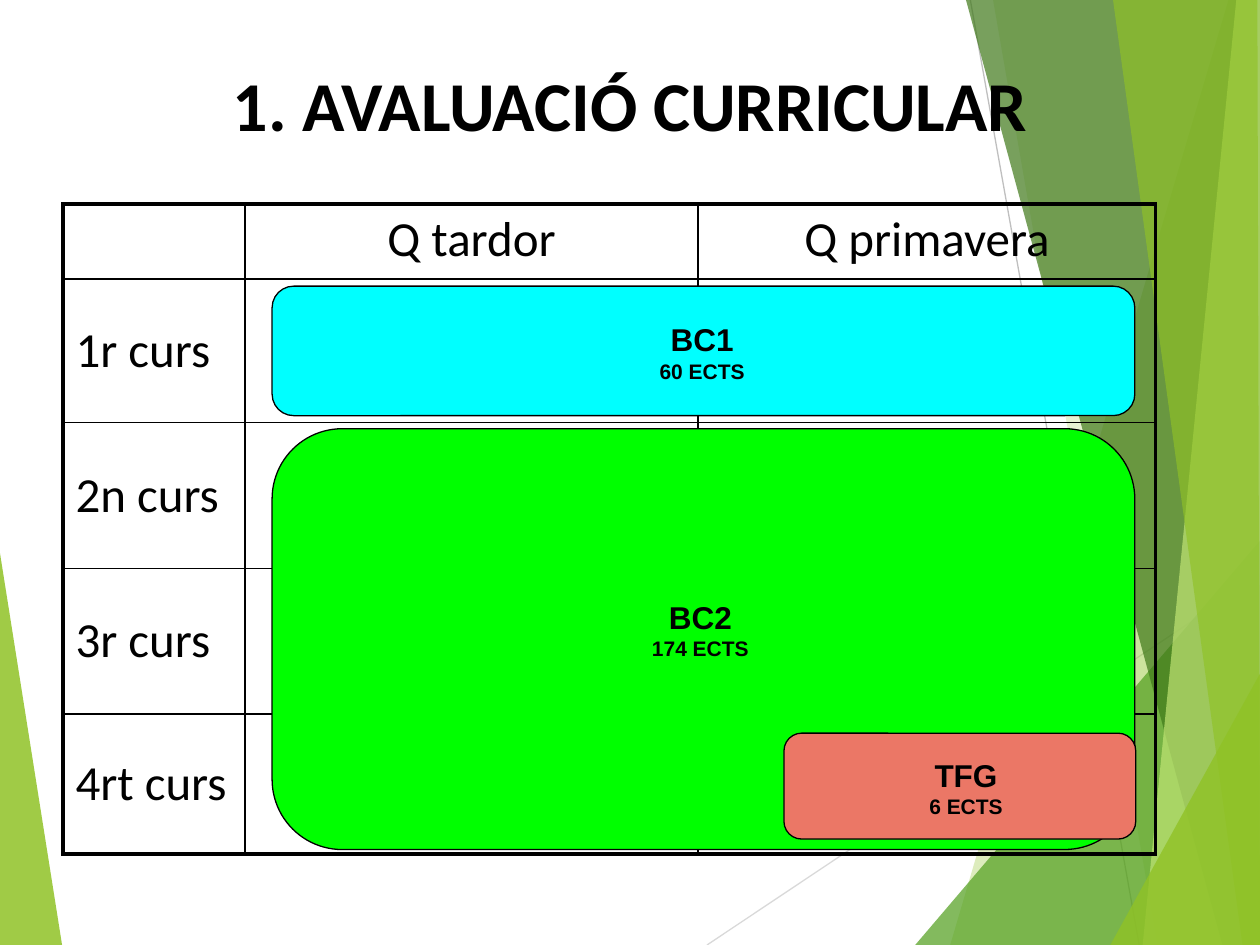
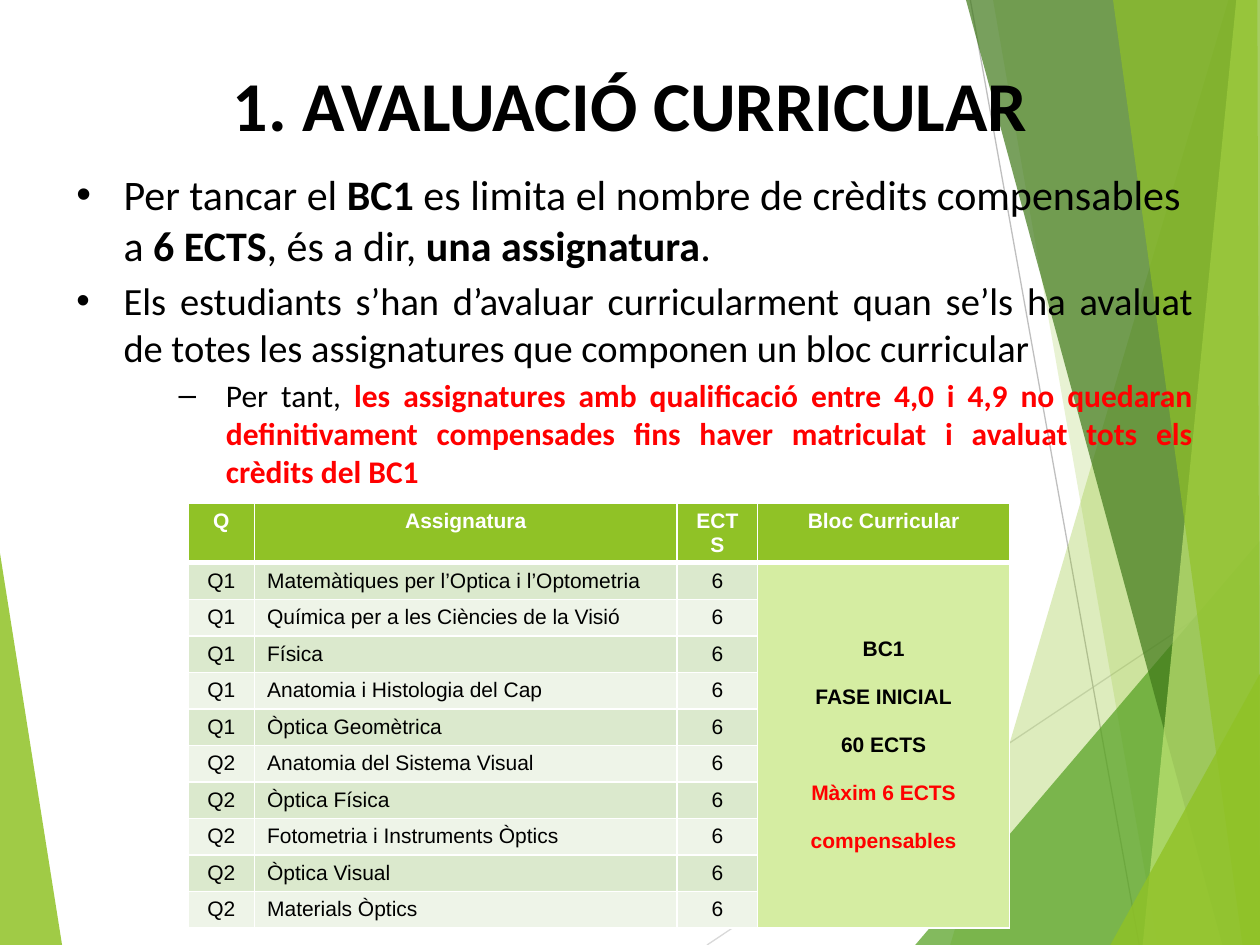
from typing import NamedTuple, Optional

from lxml import etree
from pptx import Presentation
from pptx.dml.color import RGBColor
from pptx.enum import shapes, text
from pptx.oxml import ns
from pptx.util import Pt

BLACK = RGBColor(0x00, 0x00, 0x00)
WHITE = RGBColor(0xFF, 0xFF, 0xFF)
RED = RGBColor(0xFF, 0x00, 0x00)
CYAN = RGBColor(0x00, 0xFF, 0xFF)
BRIGHT_GREEN = RGBColor(0x00, 0xFF, 0x00)
CORAL = RGBColor(0xEB, 0x77, 0x66)
LIME = RGBColor(0x90, 0xC2, 0x26)
LEAF = RGBColor(0x54, 0xA0, 0x21)
FOREST = RGBColor(0x3F, 0x78, 0x19)
PALE_LIME = RGBColor(0xC0, 0xE4, 0x74)
BLOCK_LIME = RGBColor(0xD5, 0xED, 0xA2)
ROW_DARK = RGBColor(0xDB, 0xE9, 0xCD)
ROW_LIGHT = RGBColor(0xEE, 0xF4, 0xE8)
GREY = RGBColor(0xBF, 0xBF, 0xBF)
LIGHT_GREY = RGBColor(0xD9, 0xD9, 0xD9)

HEADING_FONT, LABEL_FONT = "Calibri", "Arial"
WIDTH, HEIGHT = 720, 540
LEFT, CENTER, JUSTIFY = text.PP_ALIGN.LEFT, text.PP_ALIGN.CENTER, text.PP_ALIGN.JUSTIFY


class Facet(NamedTuple):
    points: list
    color: RGBColor
    opacity: int


class Ray(NamedTuple):
    start: tuple
    end: tuple
    color: RGBColor


class Block(NamedTuple):
    box: tuple
    color: RGBColor


class Label(NamedTuple):
    box: tuple
    name: str
    credits: str


class Style(NamedTuple):
    size: float
    font: str
    color: RGBColor = BLACK
    bold: Optional[bool] = None
    align: text.PP_ALIGN = CENTER


class Bullet(NamedTuple):
    runs: list  # (words, bold) pairs
    size: float
    mark: str = "•"
    margin: float = 27
    level: int = 0
    align: text.PP_ALIGN = JUSTIFY
    bold_color: RGBColor = BLACK


LEFT_FACET = Facet([(0, 316), (35.5, HEIGHT), (0, HEIGHT)], LIME, 85)
RAYS = [
    Ray((404, HEIGHT), (WIDTH, 329), LIGHT_GREY),
    Ray((554.5, 0), (651, HEIGHT), GREY),
]
RIGHT_FACETS = [
    Facet([(702, 0), (543, HEIGHT), (WIDTH, HEIGHT), (WIDTH, 0)], LIME, 30),
    Facet([(567.5, 0), (661.5, HEIGHT), (WIDTH, HEIGHT), (WIDTH, 0)], LIME, 20),
    Facet([(523, HEIGHT), (WIDTH, 309), (WIDTH, HEIGHT)], LEAF, 72),
    Facet([(552, 0), (698.5, HEIGHT), (WIDTH, HEIGHT), (WIDTH, 0)], FOREST, 70),
    Facet([(706.5, 0), (653, HEIGHT), (WIDTH, HEIGHT), (WIDTH, 0)], PALE_LIME, 70),
    Facet([(636, 0), (710, HEIGHT), (WIDTH, HEIGHT), (718.5, 0)], LIME, 65),
    Facet([(634.5, HEIGHT), (WIDTH, 385), (WIDTH, HEIGHT)], LIME, 80),
]

TERMS = ["Q tardor", "Q primavera"]
YEARS = ["1r curs", "2n curs", "3r curs", "4rt curs"]
BLOCKS = [
    Block((155.5, 163.5, 493, 74), CYAN),
    Block((155.5, 245, 493, 240.5), BRIGHT_GREEN),
    Block((448, 419, 201, 60.5), CORAL),
]
LABELS = [
    Label((369.5, 179.5, 63.5, 44), "BC1", "60 ECTS"),
    Label((365, 338, 70.5, 44), "BC2", "174 ECTS"),
    Label((523.5, 428.5, 57, 44), "TFG", "6 ECTS"),
]

RULES = [
    Bullet([("Per tancar el ", False), ("BC1", True),
            (" es limita el nombre de crèdits compensables a ", False), ("6 ECTS", True),
            (", és a dir, ", False), ("una assignatura", True), (".", False)],
           24, align=LEFT),
    Bullet([("Els estudiants s’han d’avaluar curricularment quan se’ls ha avaluat de totes "
             "les assignatures que componen un bloc curricular", False)], 22),
    Bullet([("Per tant, ", False),
            ("les assignatures amb qualificació entre 4,0 i 4,9 no quedaran definitivament "
             "compensades fins haver matriculat i avaluat tots els crèdits del BC1", True)],
           18, "–", 85.5, 1, bold_color=RED),
]
HEADERS = ["Q", "Assignatura", "ECTS", "Bloc Curricular"]
SUBJECTS = {
    "Q1": ["Matemàtiques per l’Optica i l’Optometria", "Química per a les Ciències de la Visió",
           "Física", "Anatomia i Histologia del Cap", "Òptica Geomètrica"],
    "Q2": ["Anatomia del Sistema Visual", "Òptica Física", "Fotometria i Instruments Òptics",
           "Òptica Visual", "Materials Òptics"],
}
BLOCK_NOTES = [("BC1", BLACK), ("FASE INICIAL", BLACK), ("60 ECTS", BLACK),
               ("Màxim 6 ECTS", RED), ("compensables", RED)]


def points(values) -> list:
    return [Pt(value) for value in values]


def style_paragraph(paragraph, style: Style) -> None:
    paragraph.alignment = style.align
    font = paragraph.font
    font.size, font.name, font.bold = Pt(style.size), style.font, style.bold
    font.color.rgb = style.color


def write_lines(frame, lines: list, gap: float = 0) -> None:
    """Write (words, style) pairs, one paragraph each."""
    for index, (words, style) in enumerate(lines):
        paragraph = frame.add_paragraph() if index else frame.paragraphs[0]
        paragraph.text = words
        if index and gap:
            paragraph.space_before = Pt(gap)
        style_paragraph(paragraph, style)


def add_text(slide, box: tuple, wrap: bool = True):
    frame = slide.shapes.add_textbox(*points(box)).text_frame
    frame.word_wrap = wrap
    return frame


# Shared background and title
def draw_facet(slide, facet: Facet) -> None:
    start, *rest = [tuple(points(corner)) for corner in facet.points]
    builder = slide.shapes.build_freeform(*start)
    builder.add_line_segments(rest, close=True)
    shape = builder.convert_to_shape()
    shape.shadow.inherit = False
    shape.line.fill.background()
    shape.fill.solid()
    shape.fill.fore_color.rgb = facet.color
    color = shape.fill._xPr.find(".//" + ns.qn("a:srgbClr"))
    etree.SubElement(color, ns.qn("a:alpha"), val=str(facet.opacity * 1000))


def draw_ray(slide, ray: Ray) -> None:
    line = slide.shapes.add_connector(shapes.MSO_CONNECTOR.STRAIGHT,
                                      *points(ray.start + ray.end))
    line.line.color.rgb = ray.color
    line.line.width = Pt(0.75)
    etree.SubElement(line._element.spPr, ns.qn("a:effectLst"))


def add_themed_slide(deck):
    slide = deck.slides.add_slide(deck.slide_layouts[6])
    draw_facet(slide, LEFT_FACET)
    for ray in RAYS:
        draw_ray(slide, ray)
    for facet in RIGHT_FACETS:
        draw_facet(slide, facet)
    return slide


def add_title(slide) -> None:
    write_lines(add_text(slide, (25, 31.5, 670, 55.5)),
                [("1. AVALUACIÓ CURRICULAR", Style(40, HEADING_FONT, bold=True))])


# Tables
def add_grid(slide, corner: tuple, widths: list, heights: list):
    size = (sum(widths), sum(heights))
    table = slide.shapes.add_table(len(heights), len(widths), *points(corner + size)).table
    table.first_row = table.horz_banding = False
    for column, width in zip(table.columns, widths):
        column.width = Pt(width)
    for row, height in zip(table.rows, heights):
        row.height = Pt(height)
    return table


def fill_cell(cell, color: RGBColor) -> None:
    cell.fill.solid()
    cell.fill.fore_color.rgb = color


def set_borders(cell, color: RGBColor, left: float, right: float, top: float,
                bottom: float) -> None:
    properties = cell._tc.get_or_add_tcPr()
    for index, (side, width) in enumerate(zip("LRTB", (left, right, top, bottom))):
        line = etree.Element(ns.qn(f"a:ln{side}"), w=str(Pt(width)))
        solid = etree.SubElement(line, ns.qn("a:solidFill"))
        etree.SubElement(solid, ns.qn("a:srgbClr"), val=str(color))
        properties.insert(index, line)


def add_year_table(slide) -> None:
    table = add_grid(slide, (36, 116.5), [104, 259, 261.5], [43, 82, 83.5, 83, 80])
    last_row, last_column = len(YEARS), len(TERMS)
    thick, thin = 2.25, 1
    for r in range(last_row + 1):
        for c in range(last_column + 1):
            cell = table.cell(r, c)
            cell.fill.background()
            set_borders(cell, BLACK, *(thick if edge else thin for edge in
                                       (c == 0, c == last_column, r == 0, r == last_row)))
    for c, term in enumerate(TERMS, 1):
        write_lines(table.cell(0, c).text_frame, [(term, Style(28, HEADING_FONT))])
    for r, year in enumerate(YEARS, 1):
        cell = table.cell(r, 0)
        cell.vertical_anchor = text.MSO_ANCHOR.MIDDLE
        write_lines(cell.text_frame, [(year, Style(28, HEADING_FONT, align=LEFT))])


def add_subject_table(slide) -> None:
    subjects = [(term, name, "6") for term, names in SUBJECTS.items() for name in names]
    table = add_grid(slide, (107.5, 287.5), [38, 241.5, 46, 144], [20.88] * (len(subjects) + 1))
    for c, header in enumerate(HEADERS):
        cell = table.cell(0, c)
        write_lines(cell.text_frame, [(header, Style(12, LABEL_FONT, WHITE, True))])
        fill_cell(cell, LIME)
        set_borders(cell, WHITE, 1, 1, 1, 3)
    for r, subject in enumerate(subjects, 1):
        for c, words in enumerate(subject):
            cell = table.cell(r, c)
            align = LEFT if c == 1 else CENTER
            write_lines(cell.text_frame, [(words, Style(12, LABEL_FONT, align=align))])
            fill_cell(cell, ROW_DARK if r % 2 else ROW_LIGHT)
        for c in range(len(HEADERS)):
            set_borders(table.cell(r, c), WHITE, 1, 1, 3 if r == 1 else 1, 1)
    block = table.cell(1, 3)
    block.merge(table.cell(len(subjects), 3))
    block.vertical_anchor = text.MSO_ANCHOR.MIDDLE
    fill_cell(block, BLOCK_LIME)
    write_lines(block.text_frame, [(words, Style(12, LABEL_FONT, color, True))
                                   for words, color in BLOCK_NOTES], gap=14)


# Curricular blocks and their labels
def draw_block(slide, block: Block) -> None:
    shape = slide.shapes.add_shape(shapes.MSO_SHAPE.ROUNDED_RECTANGLE, *points(block.box))
    shape.shadow.inherit = False
    shape.fill.solid()
    shape.fill.fore_color.rgb = block.color
    shape.line.color.rgb = BLACK
    shape.line.width = Pt(0.75)


def draw_label(slide, label: Label) -> None:
    write_lines(add_text(slide, label.box, wrap=False),
                [(label.name, Style(18, LABEL_FONT, bold=True)),
                 (label.credits, Style(12, LABEL_FONT, bold=True))])


# Bulleted rules
def write_bullet(paragraph, bullet: Bullet) -> None:
    paragraph.level = bullet.level
    properties = paragraph._p.get_or_add_pPr()
    properties.set("marL", str(Pt(bullet.margin)))
    properties.set("indent", str(Pt(-27)))
    etree.SubElement(properties, ns.qn("a:buFont"), typeface=LABEL_FONT)
    etree.SubElement(properties, ns.qn("a:buChar"), char=bullet.mark)
    style_paragraph(paragraph, Style(bullet.size, HEADING_FONT, align=bullet.align))
    for words, bold in bullet.runs:
        run = paragraph.add_run()
        run.text = words
        if bold:
            run.font.bold = True
            run.font.color.rgb = bullet.bold_color


def add_rules(slide) -> None:
    frame = add_text(slide, (36.5, 93, 652.5, 193.5))
    for index, bullet in enumerate(RULES):
        paragraph = frame.add_paragraph() if index else frame.paragraphs[0]
        write_bullet(paragraph, bullet)
        if index:
            paragraph.space_before = Pt(bullet.size * 0.2)


def main() -> None:
    deck = Presentation()
    deck.slide_width, deck.slide_height = Pt(WIDTH), Pt(HEIGHT)

    overview = add_themed_slide(deck)
    add_year_table(overview)
    for block in BLOCKS:
        draw_block(overview, block)
    for label in LABELS:
        draw_label(overview, label)
    add_title(overview)

    first_block = add_themed_slide(deck)
    add_subject_table(first_block)
    add_rules(first_block)
    add_title(first_block)

    deck.save("out.pptx")


if __name__ == "__main__":
    main()
